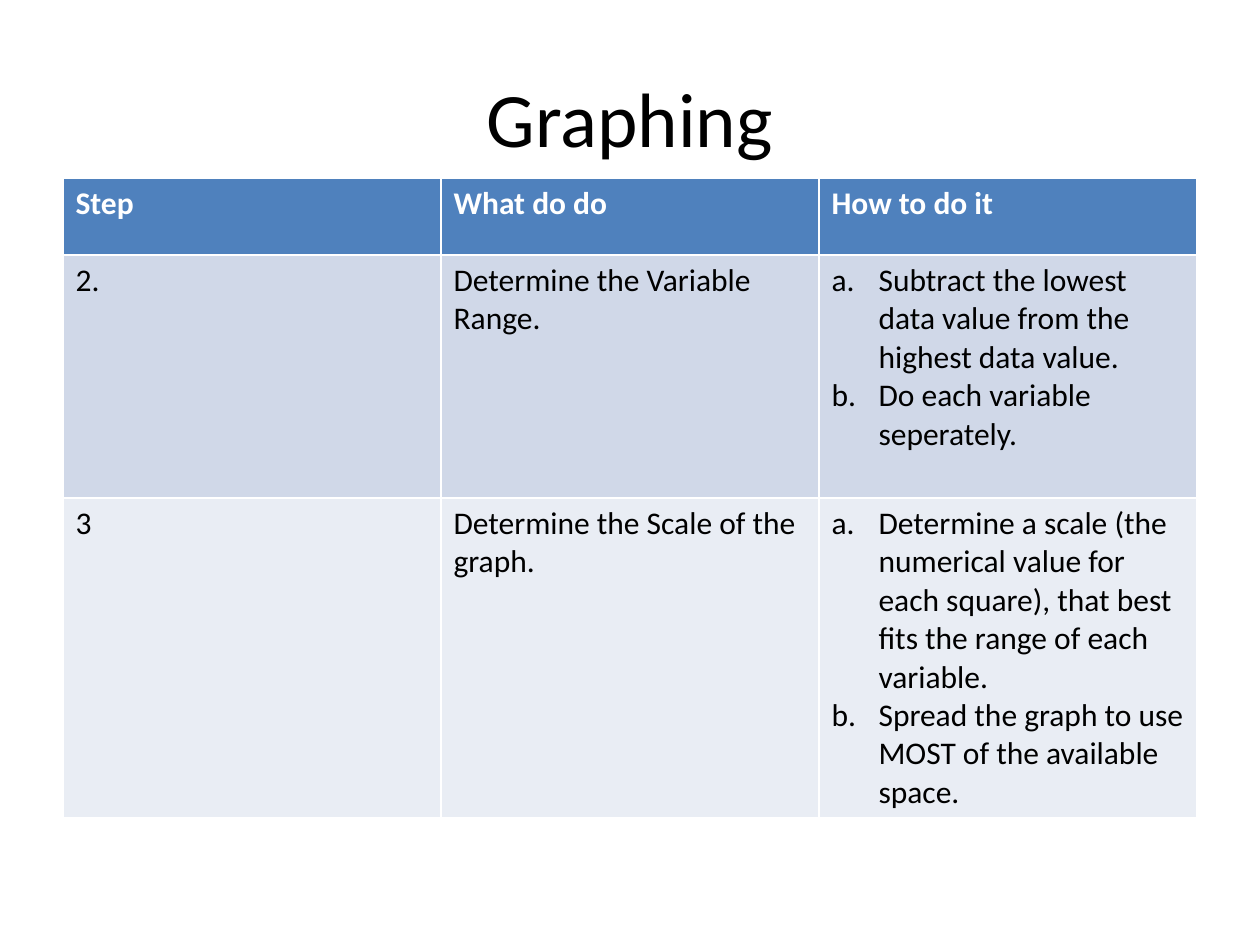
"""Build the Graphing slide: a title over a table of steps."""
from dataclasses import dataclass

import pptx
import pptx.dml.color
import pptx.enum.text
import pptx.oxml.ns
import pptx.util
from lxml import etree

PX_PER_INCH = 126


def px(length):
    """Turn whole pixels into EMU."""
    return pptx.util.Emu(round(length * 914400 / PX_PER_INCH))


@dataclass(frozen=True)
class Theme:
    """Colours, font and type sizes."""
    font: str = "Calibri"
    title_size: int = 44
    table_size: int = 18
    ink: str = "000000"
    header_ink: str = "FFFFFF"
    header_fill: str = "4F81BD"
    row_fills: tuple = ("D0D8E8", "E9EDF4")


class SlideBuilder:
    """Hold the theme and the current slide."""

    def __init__(self, slide, theme):
        """Keep the slide and its style."""
        self.slide = slide
        self.theme = theme

    def style(self, paragraph, size, color, bold=False):
        """Format every run of a paragraph."""
        for run in paragraph.runs:
            run.font.name = self.theme.font
            run.font.size = pptx.util.Pt(size)
            run.font.bold = bold
            run.font.color.rgb = pptx.dml.color.RGBColor.from_string(color)

    def title(self, text, left, top, width, height):
        """Fill and place the title placeholder."""
        heading = self.slide.shapes.title
        heading.left, heading.top = px(left), px(top)
        heading.width, heading.height = px(width), px(height)
        frame = heading.text_frame
        frame.text = text
        frame.vertical_anchor = pptx.enum.text.MSO_ANCHOR.MIDDLE
        frame.paragraphs[0].alignment = pptx.enum.text.PP_ALIGN.CENTER
        self.style(frame.paragraphs[0], self.theme.title_size, self.theme.ink)

    def letter(self, paragraph, indent):
        """Number a paragraph a., b., c. with a hanging indent."""
        properties = paragraph._p.get_or_add_pPr()
        properties.set("marL", str(px(indent)))
        properties.set("indent", str(-px(indent)))
        numbering = etree.SubElement(properties, pptx.oxml.ns.qn("a:buAutoNum"))
        numbering.set("type", "alphaLcPeriod")

    def cell(self, cell, content, fill, ink, bold):
        """Write a cell; a list of texts becomes a lettered list."""
        lettered = isinstance(content, list)
        cell.text_frame.text = "\n".join(content) if lettered else content
        cell.fill.solid()
        cell.fill.fore_color.rgb = pptx.dml.color.RGBColor.from_string(fill)
        for paragraph in cell.text_frame.paragraphs:
            if lettered:
                self.letter(paragraph, 47)
            self.style(paragraph, self.theme.table_size, ink, bold)

    def table(self, rows, left, top, column_width, row_heights):
        """Add a table with a header row and alternating row fills."""
        columns = len(rows[0])
        table = self.slide.shapes.add_table(
            len(rows), columns, px(left), px(top),
            px(column_width * columns), px(sum(row_heights))).table
        for column in table.columns:
            column.width = px(column_width)
        for index, (row, height) in enumerate(zip(rows, row_heights)):
            table.rows[index].height = px(height)
            header = index == 0
            fill = self.theme.header_fill if header else self.theme.row_fills[(index - 1) % 2]
            ink = self.theme.header_ink if header else self.theme.ink
            for cell, content in zip(table.rows[index].cells, row):
                self.cell(cell, content, fill, ink, header)


STEPS = [
    ["Step", "What do do", "How to do it"],
    ["2.", "Determine the Variable Range.",
     ["Subtract the lowest data value from the highest data value.",
      "Do each variable seperately."]],
    ["3", "Determine the Scale of the graph.",
     ["Determine a scale (the numerical value for each square), "
      "that best fits the range of each variable.",
      "Spread the graph to use MOST of the available space."]],
]


def main():
    """Build and save the presentation."""
    deck = pptx.Presentation()
    deck.slide_width, deck.slide_height = px(1260), px(945)
    title_only = deck.slide_layouts.get_by_name("Title Only")
    builder = SlideBuilder(deck.slides.add_slide(title_only), Theme())
    builder.title("Graphing", 63, 38, 1134, 158)
    builder.table(STEPS, 63, 178, 378, [77, 243, 243])
    deck.save("out.pptx")


if __name__ == "__main__":
    main()
